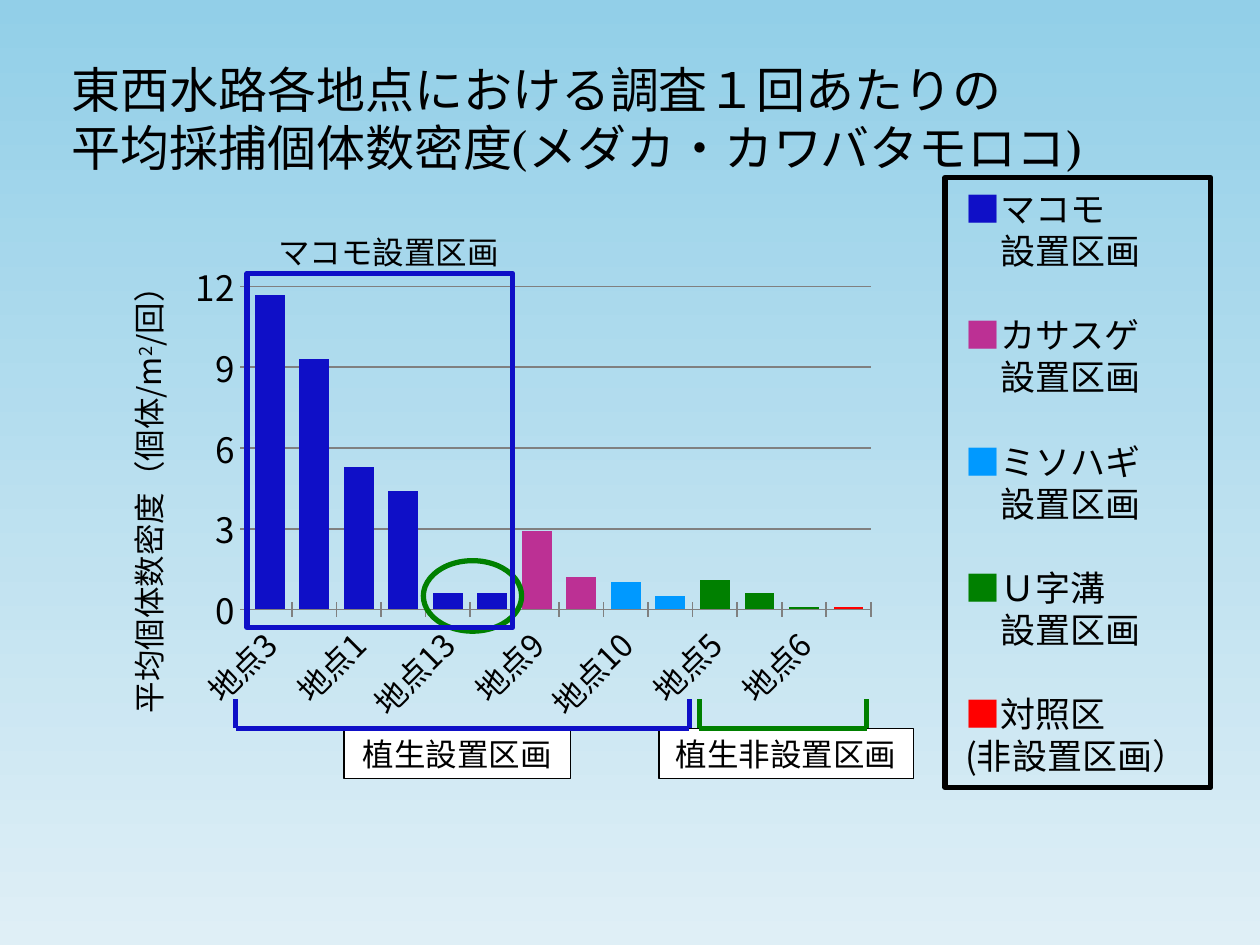
from lxml import etree
from pptx import Presentation, util as u
from pptx.chart.data import CategoryChartData
from pptx.dml.color import RGBColor
from pptx.enum import chart as charts, shapes, text
from pptx.oxml import parse_xml
from pptx.oxml.ns import nsdecls, qn

SERIF, SANS = "TeX Gyre Schola", "Noto Sans CJK JP"
BLACK, WHITE, GREY = "000000", "FFFFFF", "808080"
NAVY, PURPLE, SKY, GREEN, RED = "0F0FC7", "BC3094", "0099FF", "008000", "FF0000"
TITLE = ["東西水路各地点における調査１回あたりの", "平均採捕個体数密度(メダカ・カワバタモロコ)"]
AXIS_TITLE = ["平均個体数密度（個体/m", "2", "/回）"]
SITES = [
    (3, 11.7, NAVY), (4, 9.3, NAVY), (1, 5.3, NAVY), (11, 4.4, NAVY), (13, 0.6, NAVY),
    (7, 0.6, NAVY), (9, 2.9, PURPLE), (8, 1.2, PURPLE), (10, 1, SKY), (12, 0.5, SKY),
    (5, 1.1, GREEN), (2, 0.6, GREEN), (6, 0.1, GREEN), (14, 0.1, RED),
]
LEGEND = [
    (NAVY, "マコモ", "設置区画", 0.28), (PURPLE, "カサスゲ", "設置区画", 0.28),
    (SKY, "ミソハギ", "設置区画", 0.28), (GREEN, "Ｕ字溝", "設置区画", 0.28),
    (RED, "対照区", "(非設置区画）", 0),
]
GROUPS = [("植生設置区画", 2.73, 1.8), ("植生非設置区画", 5.23, 2.02)]
BRACKETS = [(1.87, 5.47, NAVY), (5.55, 6.88, GREEN)]
BRACKET_TOP, BRACKET_BOTTOM = 5.55, 5.78
OUTLINES = [
    ("RECTANGLE", (7.5, 1.41, 2.11, 4.84), BLACK),
    ("OVAL", (3.36, 4.45, 0.78, 0.56), GREEN),
    ("RECTANGLE", (1.96, 2.17, 2.11, 2.81), NAVY),
]


def rgb(value):
    """Turn a hex string into a colour."""
    return RGBColor.from_string(value)


def inches(values):
    """Convert numbers to lengths in inches."""
    return [u.Inches(value) for value in values]


def set_font(font, size, name, color=BLACK):
    """Set size, typeface and colour of a font."""
    font.size, font.name, font.bold = u.Pt(size), name, False
    font.color.rgb = rgb(color)


def style(paragraph, size, name, align=text.PP_ALIGN.LEFT):
    """Format a paragraph for Latin and East Asian letters."""
    set_font(paragraph.font, size, name)
    paragraph.alignment = align
    defaults = paragraph._p.get_or_add_pPr().find(qn("a:defRPr"))
    etree.SubElement(defaults, qn("a:ea")).set("typeface", name)


def set_line(line, color, width):
    """Set colour and width of a line."""
    line.color.rgb = rgb(color)
    line.width = u.Pt(width)


def add_shape(slide, kind, box, color, width):
    """Add an unfilled outline shape."""
    shape = slide.shapes.add_shape(getattr(shapes.MSO_SHAPE, kind), *inches(box))
    shape.shadow.inherit = False
    shape.fill.background()
    set_line(shape.line, color, width)
    return shape


def add_connector(slide, start, end, color):
    """Add a straight line without a shadow."""
    connector = slide.shapes.add_connector(
        shapes.MSO_CONNECTOR.STRAIGHT, *inches(start + end))
    set_line(connector.line, color, 3)
    etree.SubElement(connector._element.spPr, qn("a:effectLst"))


def layout(**places):
    """Make a manual chart layout."""
    target = '<c:layoutTarget val="inner"/>' if "w" in places else ""
    modes = "".join(f'<c:{key}Mode val="edge"/>' for key in "xy")
    values = "".join(f'<c:{key} val="{value}"/>' for key, value in places.items())
    return parse_xml(f'<c:layout {nsdecls("c")}><c:manualLayout>{target}{modes}{values}'
                     "</c:manualLayout></c:layout>")


def add_value_title(axis):
    """Add the rotated value axis title with its superscript."""
    frame = axis.axis_title.text_frame
    frame._txBody.bodyPr.set("rot", "-5400000")
    paragraph = frame.paragraphs[0]
    for part in AXIS_TITLE:
        run = paragraph.add_run()
        run.text = part
        set_font(run.font, 18, SANS)
        if part == "2":
            run._r.get_or_add_rPr().set("baseline", "30000")
    axis.axis_title._element.find(qn("c:tx")).addnext(layout(x=0.05, y=0.06))


def add_density_chart(slide):
    """Add the column chart of densities by site."""
    data = CategoryChartData()
    data.categories = [f"地点{number}" for number, _, _ in SITES]
    data.add_series("Series 1", [density for _, density, _ in SITES])
    chart = slide.shapes.add_chart(
        charts.XL_CHART_TYPE.COLUMN_STACKED, *inches((0.7, 1.8, 7.35, 4.66)), data).chart
    set_font(chart.font, 10, SERIF)
    chart.has_legend = chart.has_title = False
    plot = chart.plots[0]
    plot.gap_width, plot.overlap, plot.vary_by_categories = 50, 100, False
    for index, (_, _, color) in enumerate(SITES):
        fill = plot.series[0].points[index].format.fill
        fill.solid()
        fill.fore_color.rgb = rgb(color)
    area = chart._chartSpace.chart.plotArea
    for old in area.findall(qn("c:layout")):
        area.remove(old)
    area.insert(0, layout(x=0.172, y=0.102, w=0.673, h=0.55))

    sites, values = chart.category_axis, chart.value_axis
    for axis, size in ((sites, 18), (values, 20)):
        set_font(axis.tick_labels.font, size, SANS)
        axis.major_tick_mark = charts.XL_TICK_MARK.CROSS
        set_line(axis.format.line, GREY, 1)
    sites._element.txPr.bodyPr.set("rot", "-2700000")
    skip = parse_xml(f'<c:tickLblSkip {nsdecls("c")} val="2"/>')
    sites._element.find(qn("c:noMultiLvlLbl")).addprevious(skip)
    values.minimum_scale, values.maximum_scale, values.major_unit = 0, 12, 3
    values.tick_labels.number_format = r"#,##0;[Red]\-#,##0"
    values.tick_labels.number_format_is_linked = False
    values.has_major_gridlines = True
    set_line(values.major_gridlines.format.line, GREY, 1)
    add_value_title(values)


def add_title(slide):
    """Fill and place the slide title."""
    title = slide.shapes.title
    title.left, title.top, title.width, title.height = inches((0.47, 0.42, 8.83, 1.04))
    frame = title.text_frame
    frame.text = "\n".join(TITLE)
    frame.word_wrap, frame.auto_size = True, text.MSO_AUTO_SIZE.NONE
    frame.vertical_anchor = text.MSO_ANCHOR.TOP
    for paragraph in frame.paragraphs:
        style(paragraph, 28, SERIF)
        paragraph.line_spacing = u.Pt(33.5)


def add_legend(slide):
    """Add the colour key as text."""
    frame = slide.shapes.add_textbox(*inches((7.66, 1.39, 1.88, 4.77))).text_frame
    frame.word_wrap = True
    frame.vertical_anchor = text.MSO_ANCHOR.BOTTOM
    frame.margin_left = frame.margin_right = frame.margin_bottom = 0
    for index, (color, name, detail, indent) in enumerate(LEGEND):
        head = frame.add_paragraph() if index else frame.paragraphs[0]
        marker = head.add_run()
        marker.text = "■"
        marker.font.color.rgb = rgb(color)
        head.add_run().text = name
        head.space_before = u.Pt(24 if index else 0)
        tail = frame.add_paragraph()
        tail.text = detail
        tail._p.get_or_add_pPr().set("marL", str(u.Inches(indent)))
        for paragraph in (head, tail):
            paragraph.line_spacing = u.Pt(24)
            style(paragraph, 20, SANS)


def main():
    """Build the slide and save it."""
    presentation = Presentation()
    presentation.slide_width, presentation.slide_height = inches((10, 7.5))
    slide = presentation.slides.add_slide(presentation.slide_layouts[5])
    background = slide.background.fill
    background.gradient()
    background.gradient_angle = 270
    for stop, color in zip(background.gradient_stops, ("92CFE8", "DFEFF6")):
        stop.color.rgb = rgb(color)
    add_title(slide)
    add_density_chart(slide)
    for name, left, width in GROUPS:
        box = add_shape(slide, "RECTANGLE", (left, BRACKET_BOTTOM, width, 0.4), BLACK, 0.75)
        box.fill.solid()
        box.fill.fore_color.rgb = rgb(WHITE)
        box.text_frame.text = name
        style(box.text_frame.paragraphs[0], 18, SERIF, text.PP_ALIGN.CENTER)
    for left, right, color in BRACKETS:
        corners = [(left, BRACKET_TOP), (left, BRACKET_BOTTOM),
                   (right, BRACKET_BOTTOM), (right, BRACKET_TOP)]
        for start, end in zip(corners, corners[1:]):
            add_connector(slide, start, end, color)
    for kind, box, color in OUTLINES:
        add_shape(slide, kind, box, color, 3)
    label = slide.shapes.add_textbox(*inches((2.11, 1.8, 1.97, 0.4))).text_frame
    label.text, label.word_wrap = "マコモ設置区画", False
    label.vertical_anchor = text.MSO_ANCHOR.MIDDLE
    style(label.paragraphs[0], 18, SERIF)
    add_legend(slide)
    presentation.save("out.pptx")


if __name__ == "__main__":
    main()
